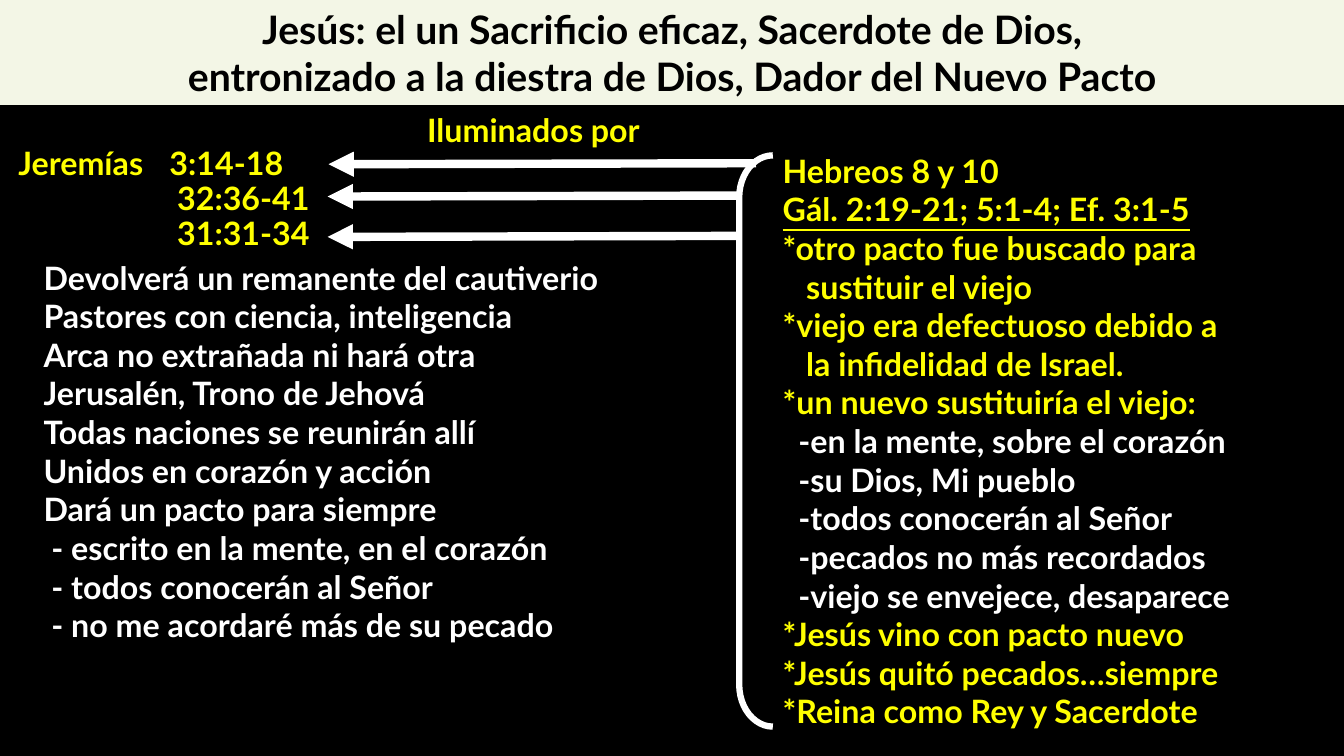
from lxml.etree import SubElement
from pptx import Presentation
from pptx.dml.color import RGBColor
from pptx.enum.shapes import MSO_CONNECTOR, MSO_SHAPE
from pptx.enum.text import MSO_ANCHOR, MSO_AUTO_SIZE, PP_ALIGN
from pptx.oxml.ns import qn
from pptx.util import Pt

THEME = {
    "font": "Lato", "title_size": 28, "body_size": 23,
    "background": "000000", "banner": "F3F6E6", "title": "000000",
    "accent": "FFFF00", "plain": "FFFFFF",
    "bracket_width": 4.5, "arrow_width": 6,
}
SPACE = 5.6  # width of one space at body size
VERSE_TAB = 100.6
VERSE_INDENT = 113.5

# Each line: text, left indent, colour key, underlined
TITLE = [
    ("Jesús: el un Sacrificio eficaz, Sacerdote de Dios,", 0, "title", False),
    ("entronizado a la diestra de Dios, Dador del Nuevo Pacto", 0, "title", False),
]
LABEL = [("Iluminados por", 0, "accent", False)]
JEREMIAH = [
    ("Jeremías\t3:14-18", 0, "accent", False),
    ("32:36-41", VERSE_INDENT, "accent", False),
    ("31:31-34", VERSE_INDENT, "accent", False),
]
PROMISES = [
    ("Devolverá un remanente del cautiverio", 0, "plain", False),
    ("Pastores con ciencia, inteligencia", 0, "plain", False),
    ("Arca no extrañada ni hará otra", 0, "plain", False),
    ("Jerusalén, Trono de Jehová", 0, "plain", False),
    ("Todas naciones se reunirán allí", 0, "plain", False),
    ("Unidos en corazón y acción", 0, "plain", False),
    ("Dará un pacto para siempre", 0, "plain", False),
    ("- escrito en la mente, en el corazón", SPACE, "plain", False),
    ("- todos conocerán al Señor", SPACE, "plain", False),
    ("- no me acordaré más de su pecado", SPACE, "plain", False),
]
HEBREWS = [
    ("Hebreos 8 y 10", 0, "accent", False),
    ("Gál. 2:19-21; 5:1-4; Ef. 3:1-5", 0, "accent", True),
    ("*otro pacto fue buscado para", 0, "accent", False),
    ("sustituir el viejo", 3 * SPACE, "accent", False),
    ("*viejo era defectuoso debido a", 0, "accent", False),
    ("la infidelidad de Israel.", 3 * SPACE, "accent", False),
    ("*un nuevo sustituiría el viejo:", 0, "accent", False),
    ("-en la mente, sobre el corazón", 2 * SPACE, "plain", False),
    ("-su Dios, Mi pueblo", 2 * SPACE, "plain", False),
    ("-todos conocerán al Señor", 2 * SPACE, "plain", False),
    ("-pecados no más recordados", 2 * SPACE, "plain", False),
    ("-viejo se envejece, desaparece", 2 * SPACE, "plain", False),
    ("*Jesús vino con pacto nuevo", 0, "accent", False),
    ("*Jesús quitó pecados…siempre", 0, "accent", False),
    ("*Reina como Rey y Sacerdote", 0, "accent", False),
]
# Start x, start y, end x; each arrow drops slightly towards its head
ARROWS = [(540, 116.6, 234.7), (528, 139.7, 234), (528, 168.5, 234)]
ARROW_DROP = 0.7


def color(key):
    return RGBColor.from_string(THEME[key])


def write(shape, lines, size="body_size", align=PP_ALIGN.LEFT, spacing=None, tab=None):
    frame = shape.text_frame
    frame.word_wrap = True
    frame.auto_size = MSO_AUTO_SIZE.SHAPE_TO_FIT_TEXT
    frame.vertical_anchor = MSO_ANCHOR.TOP
    for number, (text, indent, ink, underlined) in enumerate(lines):
        paragraph = frame.paragraphs[0] if number == 0 else frame.add_paragraph()
        paragraph.alignment = align
        if spacing:
            paragraph.line_spacing = spacing
        properties = paragraph._p.get_or_add_pPr()
        properties.set("marL", str(int(Pt(indent))))
        properties.set("indent", "0")
        if tab and "\t" in text:
            stops = SubElement(properties, qn("a:tabLst"))
            SubElement(stops, qn("a:tab"), pos=str(int(Pt(tab))), algn="l")
        run = paragraph.add_run()
        run.text = text
        run.font.name = THEME["font"]
        run.font.size = Pt(THEME[size])
        run.font.bold = True
        run.font.underline = underlined
        run.font.color.rgb = color(ink)


def add_text(slide, box, lines, **style):
    write(slide.shapes.add_textbox(*map(Pt, box)), lines, **style)


def add_bracket(slide, box):
    bracket = slide.shapes.add_shape(MSO_SHAPE.LEFT_BRACKET, *map(Pt, box))
    bracket.shadow.inherit = False
    bracket.adjustments[0] = 1.25
    bracket.fill.background()
    bracket.line.color.rgb = color("plain")
    bracket.line.width = Pt(THEME["bracket_width"])


def add_banner(slide, box):
    banner = slide.shapes.add_shape(MSO_SHAPE.RECTANGLE, *map(Pt, box))
    banner.shadow.inherit = False
    banner.fill.solid()
    banner.fill.fore_color.rgb = color("banner")
    banner.line.fill.background()
    write(banner, TITLE, size="title_size", align=PP_ALIGN.CENTER)


def add_arrow(slide, start_x, start_y, end_x):
    ends = map(Pt, (start_x, start_y, end_x, start_y + ARROW_DROP))
    arrow = slide.shapes.add_connector(MSO_CONNECTOR.STRAIGHT, *ends)
    arrow.line.color.rgb = color("plain")
    arrow.line.width = Pt(THEME["arrow_width"])
    SubElement(arrow.line._get_or_add_ln(), qn("a:tailEnd"), type="triangle")
    SubElement(arrow._element.spPr, qn("a:effectLst"))


def main():
    deck = Presentation()
    deck.slide_width, deck.slide_height = Pt(960), Pt(540)
    slide = deck.slides.add_slide(deck.slide_layouts[6])
    slide.background.fill.solid()
    slide.background.fill.fore_color.rgb = color("background")

    add_text(slide, (6, 102.2, 294, 83), JEREMIAH, spacing=0.9, tab=VERSE_TAB)
    add_text(slide, (24, 180.7, 480, 286), PROMISES)
    add_text(slide, (552, 104.4, 414, 425.5), HEBREWS)
    add_bracket(slide, (528, 111, 24, 408))
    add_text(slide, (239, 75, 284.4, 35), LABEL, align=PP_ALIGN.CENTER)
    add_banner(slide, (0, 0, 960, 75))
    for arrow in ARROWS:
        add_arrow(slide, *arrow)
    deck.save("out.pptx")


if __name__ == "__main__":
    main()
